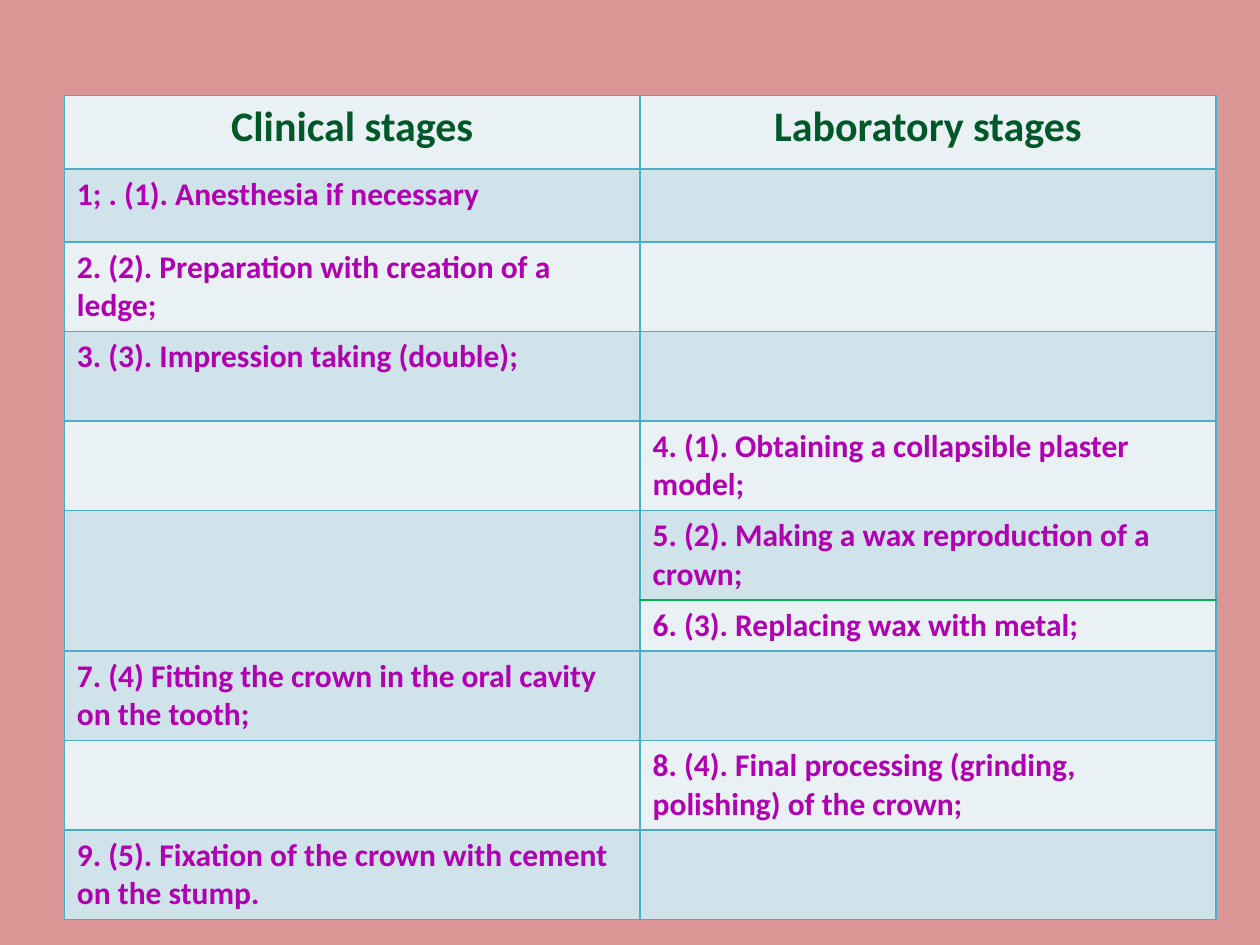
"""Build a slide with a table of clinical and laboratory stages of crown making."""
from dataclasses import dataclass

from lxml import etree
from pptx import Presentation
from pptx.dml.color import RGBColor
from pptx.enum import text
from pptx.oxml import ns
from pptx.util import Pt

HEADINGS = ("Clinical stages", "Laboratory stages")
CLINICAL, LABORATORY = 0, 1
STAGES = [
    (CLINICAL, "1; . (1). Anesthesia if necessary", 41.5),
    (CLINICAL, "2. (2). Preparation with creation of a ledge;", 51.1),
    (CLINICAL, "3. (3). Impression taking (double);", 51.1),
    (LABORATORY, "4. (1). Obtaining a collapsible plaster model;", 51.1),
    (LABORATORY, "5. (2). Making a wax reproduction of a crown;", 51.1),
    (LABORATORY, "6. (3). Replacing wax with metal;", 29.2),
    (CLINICAL, "7. (4) Fitting the crown in the oral cavity on the tooth;", 51.1),
    (LABORATORY, "8. (4). Final processing (grinding, polishing) of the crown;", 51.1),
    (CLINICAL, "9. (5). Fixation of the crown with cement on the stump.", 51.1),
]
WAX_ROW, METAL_ROW = 5, 6
LEFT, TOP, COLUMN_WIDTH, HEADING_HEIGHT = 36.8, 54.7, 329, 42


@dataclass(frozen=True)
class Theme:
    font: str = "Calibri"
    heading_size: int = 24
    stage_size: int = 18
    background: str = "D99694"
    bands: tuple = ("E9F1F5", "D0E3EA")
    heading: str = "005828"
    stage: str = "B100B2"
    border: str = "4BACC6"
    divider: str = "00B050"


THEME = Theme()


def paint(fill, color):
    fill.solid()
    fill.fore_color.rgb = RGBColor.from_string(color)


def set_borders(cell, **special):
    properties = cell._tc.get_or_add_tcPr()
    for index, side in enumerate("LRTB"):
        line = etree.Element(ns.qn(f"a:ln{side}"), w=str(Pt(1)))
        solid = etree.SubElement(line, ns.qn("a:solidFill"))
        etree.SubElement(solid, ns.qn("a:srgbClr"), val=special.get(side, THEME.border))
        properties.insert(index, line)


def write(cell, words, size, color, align):
    cell.text_frame.text = words
    para = cell.text_frame.paragraphs[0]
    para.alignment = align
    font = para.runs[0].font
    font.name, font.size, font.bold = THEME.font, Pt(size), True
    font.color.rgb = RGBColor.from_string(color)


def build_table(page):
    heights = [HEADING_HEIGHT] + [height for _, _, height in STAGES]
    table = page.shapes.add_table(
        len(heights), len(HEADINGS), Pt(LEFT), Pt(TOP),
        Pt(COLUMN_WIDTH * len(HEADINGS)), Pt(sum(heights))).table
    table.first_row = table.horz_banding = False
    for column in table.columns:
        column.width = Pt(COLUMN_WIDTH)
    dividers = {(WAX_ROW, LABORATORY): {"B": THEME.divider},
                (METAL_ROW, LABORATORY): {"T": THEME.divider}}
    for row, height in enumerate(heights):
        table.rows[row].height = Pt(height)
        shade = row if row < METAL_ROW else row - METAL_ROW
        for column in range(len(HEADINGS)):
            cell = table.cell(row, column)
            paint(cell.fill, THEME.bands[shade % 2])
            set_borders(cell, **dividers.get((row, column), {}))
    for column, words in enumerate(HEADINGS):
        write(table.cell(0, column), words, THEME.heading_size, THEME.heading,
              text.PP_ALIGN.CENTER)
    for row, (column, words, _) in enumerate(STAGES, 1):
        write(table.cell(row, column), words, THEME.stage_size, THEME.stage,
              text.PP_ALIGN.LEFT)
    table.cell(WAX_ROW, CLINICAL).merge(table.cell(METAL_ROW, CLINICAL))


def main():
    deck = Presentation()
    deck.slide_width, deck.slide_height = Pt(720), Pt(540)
    page = deck.slides.add_slide(deck.slide_layouts[6])
    paint(page.background.fill, THEME.background)
    build_table(page)
    deck.save("out.pptx")


if __name__ == "__main__":
    main()
